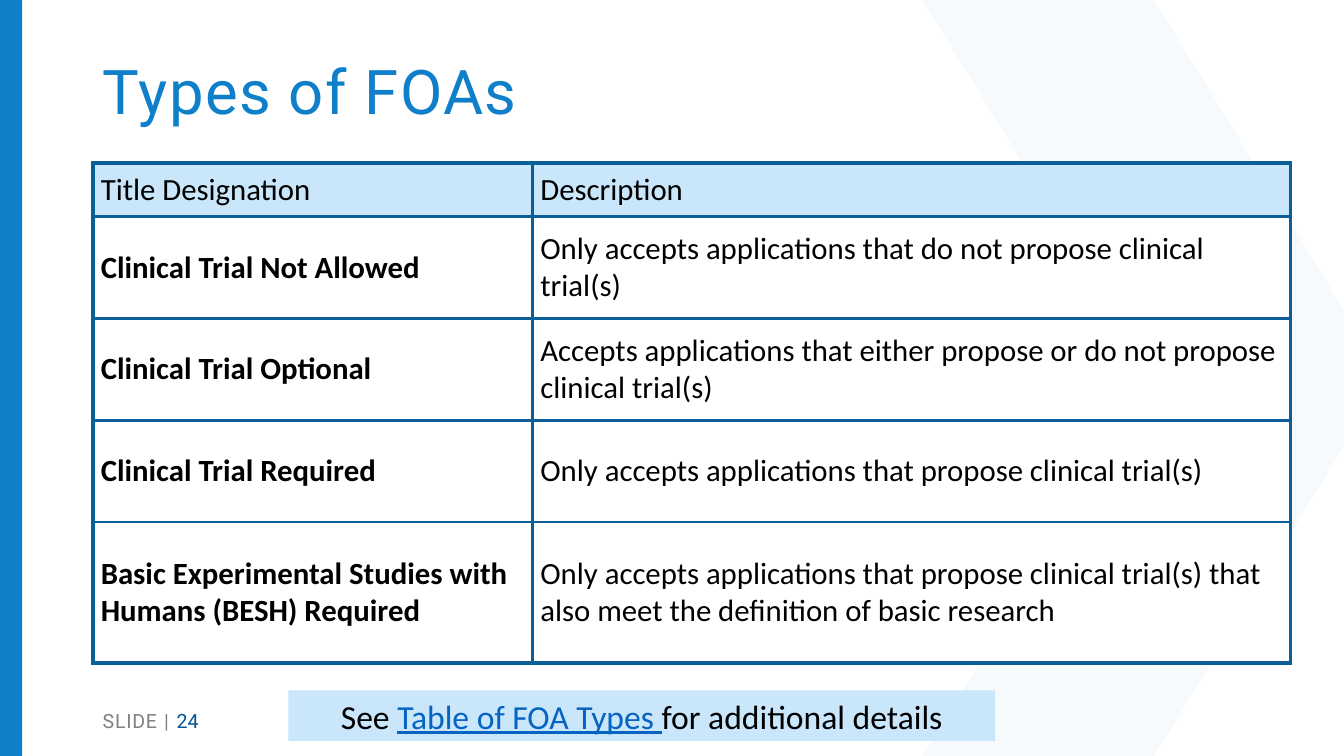
import pptx
import pptx.dml.color
import pptx.enum.shapes
import pptx.enum.text
import pptx.oxml
import pptx.oxml.ns
import pptx.util

WIDE, HIGH = 13.33, 7.5
BLUE, EDGE, PALE, BLACK = "0F7FC9", "0B5F99", "C9E6FB", "000000"
MID = pptx.enum.text.MSO_ANCHOR.MIDDLE
ALIGN = pptx.enum.text.PP_ALIGN
NS = pptx.oxml.ns
ROWS = [
    ("Title Designation", "Description"),
    ("Clinical Trial Not Allowed",
     "Only accepts applications that do not propose clinical trial(s)"),
    ("Clinical Trial Optional",
     "Accepts applications that either propose or do not propose clinical trial(s)"),
    ("Clinical Trial Required",
     "Only accepts applications that propose clinical trial(s)"),
    ("Basic Experimental Studies with Humans (BESH) Required",
     "Only accepts applications that propose clinical trial(s) that also meet "
     "the definition of basic research"),
]


def inch(*nums):
    return [pptx.util.Inches(n) for n in nums]


def hue(code):
    return pptx.dml.color.RGBColor.from_string(code)


def paint(shape, code):
    shape.shadow.inherit = False
    shape.fill.solid()
    shape.fill.fore_color.rgb = hue(code)
    shape.line.fill.background()


def write(frame, runs, size, face, align=ALIGN.LEFT):
    frame.word_wrap = True
    para = frame.paragraphs[0]
    para.alignment = align
    for text, code, look, gap in runs:
        run = para.add_run()
        run.text = text
        style = {"size": pptx.util.Pt(size), "name": face, **look}
        for key, value in style.items():
            setattr(run.font, key, value)
        run.font.color.rgb = hue(code)
        if gap:
            run._r.get_or_add_rPr().set("spc", str(int(gap * 100)))
    return para


def label(slide, box, runs, size, face):
    frame = slide.shapes.add_textbox(*inch(*box)).text_frame
    frame.vertical_anchor = MID
    return write(frame, runs, size, face)


def backdrop(slide, box):
    left, top, wide, high = box
    tip = left + wide * 0.55
    rise = high * 0.41
    points = [(tip, top), (left + wide, top + rise),
              (left + wide, top + high - rise), (tip, top + high),
              (left, top + high), (tip, top + high / 2)]
    pen = slide.shapes.build_freeform(*inch(left, top), scale=1.0)
    pen.add_line_segments([inch(*point) for point in points], close=True)
    band = pen.convert_to_shape()
    paint(band, BLUE)
    tint = band._element.find(".//" + NS.qn("a:srgbClr"))
    tint.append(pptx.oxml.parse_xml(f'<a:alpha {NS.nsdecls("a")} val="3000"/>'))


def block(slide, box, code):
    shape = slide.shapes.add_shape(
        pptx.enum.shapes.MSO_SHAPE.RECTANGLE, *inch(*box))
    paint(shape, code)
    return shape


def border(cell, outer):
    props = cell._tc.get_or_add_tcPr()
    for side in "LRTB":
        width = pptx.util.Pt(3 if side in outer else 2.25)
        props.append(pptx.oxml.parse_xml(
            f'<a:ln{side} {NS.nsdecls("a")} w="{width}"><a:solidFill>'
            f'<a:srgbClr val="{EDGE}"/></a:solidFill></a:ln{side}>'))


def grid(slide, box, cols, highs):
    table = slide.shapes.add_table(len(ROWS), len(cols), *inch(*box)).table
    table.first_row = table.horz_banding = False
    for col, share in zip(table.columns, cols):
        col.width = pptx.util.Inches(box[2] * share)
    for r, (row, high) in enumerate(zip(ROWS, highs)):
        table.rows[r].height = pptx.util.Inches(high)
        for c, text in enumerate(row):
            cell = table.cell(r, c)
            for side in ("left", "right", "top", "bottom"):
                setattr(cell, "margin_" + side, pptx.util.Inches(0.08))
            cell.vertical_anchor = MID
            outer = "LR"[c] + ("T" if r == 0 else "") + (
                "B" if r == len(ROWS) - 1 else "")
            border(cell, outer)
            cell.fill.solid()
            cell.fill.fore_color.rgb = hue("FFFFFF" if r else PALE)
            bold = r > 0 and c == 0
            write(cell.text_frame, [(text, BLACK, {"bold": bold}, 0)],
                  22, "Calibri")


def note(slide, box):
    shape = block(slide, box, PALE)
    runs = [("See ", BLACK, {}, 0),
            ("Table of FOA Types ", "0563C1", {"underline": True}, 0),
            ("for additional details", BLACK, {}, 0)]
    write(shape.text_frame, runs, 24, "Calibri", ALIGN.CENTER)


def main():
    deck = pptx.Presentation()
    deck.slide_width, deck.slide_height = inch(WIDE, HIGH)
    slide = deck.slides.add_slide(deck.slide_layouts[6])
    left = 0.92
    backdrop(slide, (9.15, 0, WIDE - 9.15, HIGH))
    block(slide, (0, 0, 0.22, HIGH), BLUE)
    title = label(slide, (left, 0.21, 11.5, 1.45),
                  [("Types of FOAs", BLUE, {}, 1)], 44, "Roboto")
    title.line_spacing = 0.9
    grid(slide, (left, 1.62, 11.88, 4.96), (0.367, 0.633),
         (0.53, 1.01, 1.01, 1.01, 1.4))
    label(slide, (left, 6.95, 3, 0.4),
          [("SLIDE", "808080", {}, 0.5), (" | ", "808080", {}, 1),
           ("24", "015396", {}, 0)], 14, "Roboto")
    note(slide, (2.86, 6.85, 7.01, 0.5))
    deck.save("out.pptx")


if __name__ == "__main__":
    main()
